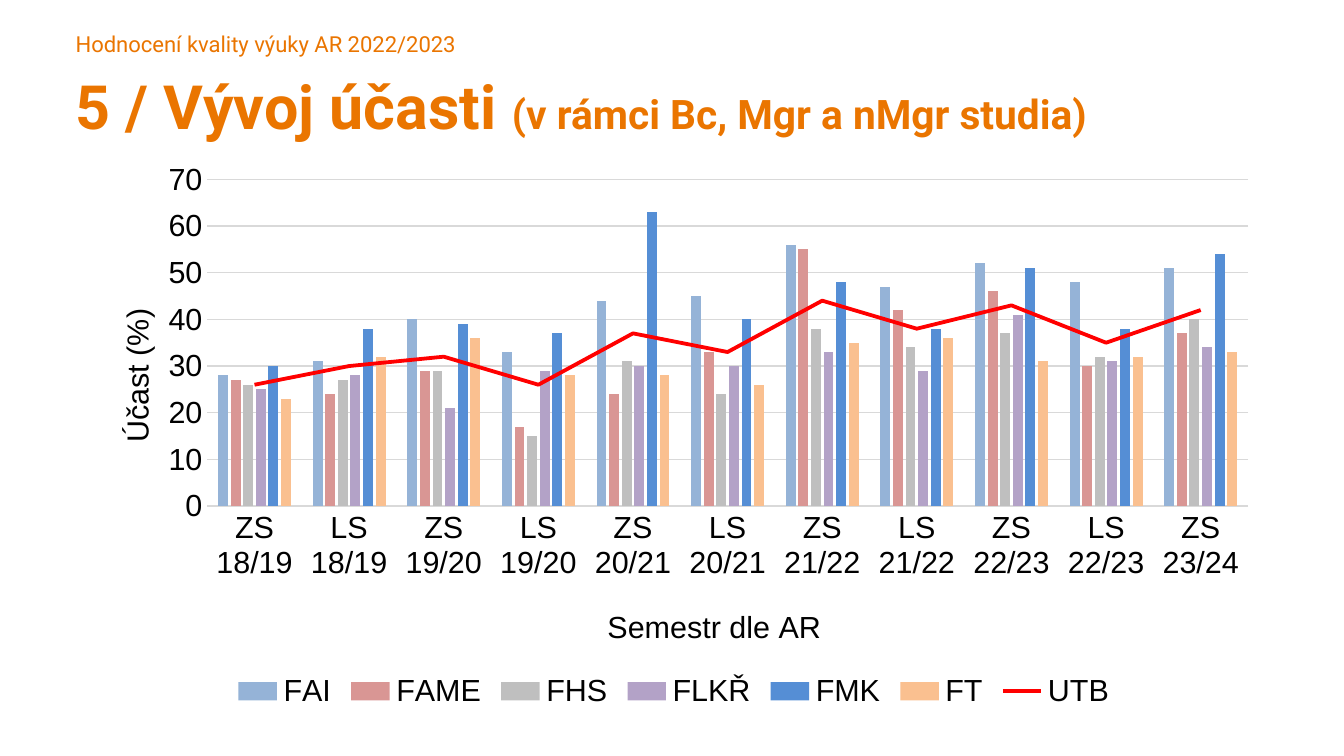
"""Builds the slide on participation by semester, with columns per faculty and a line for UTB."""
import copy

import pptx
import pptx.chart.data
import pptx.dml.color
import pptx.enum.chart
import pptx.enum.text
import pptx.oxml
import pptx.oxml.ns
import pptx.util
from lxml import etree

Pt = pptx.util.Pt
RGBColor = pptx.dml.color.RGBColor
qn = pptx.oxml.ns.qn

ORANGE = RGBColor(0xEA, 0x75, 0x00)
BLACK = RGBColor(0x00, 0x00, 0x00)
GRID_GREY = RGBColor(0xD9, 0xD9, 0xD9)
UTB_RED = RGBColor(0xFF, 0x00, 0x00)

SEMESTERS = ["ZS 18/19", "LS 18/19", "ZS 19/20", "LS 19/20", "ZS 20/21", "LS 20/21",
             "ZS 21/22", "LS 21/22", "ZS 22/23", "LS 22/23", "ZS 23/24"]
FACULTIES = [
    ("FAI", RGBColor(0x95, 0xB3, 0xD7), [28, 31, 40, 33, 44, 45, 56, 47, 52, 48, 51]),
    ("FAME", RGBColor(0xD9, 0x96, 0x94), [27, 24, 29, 17, 24, 33, 55, 42, 46, 30, 37]),
    ("FHS", RGBColor(0xBF, 0xBF, 0xBF), [26, 27, 29, 15, 31, 24, 38, 34, 37, 32, 40]),
    ("FLKŘ", RGBColor(0xB3, 0xA2, 0xC7), [25, 28, 21, 29, 30, 30, 33, 29, 41, 31, 34]),
    ("FMK", RGBColor(0x55, 0x8E, 0xD5), [30, 38, 39, 37, 63, 40, 48, 38, 51, 38, 54]),
    ("FT", RGBColor(0xFA, 0xC0, 0x90), [23, 32, 36, 28, 28, 26, 35, 36, 31, 32, 33]),
]
UTB = [26, 30, 32, 26, 37, 33, 44, 38, 43, 35, 42]


def write(frame, text, size, font="Roboto", color=ORANGE, bold=False):
    run = frame.paragraphs[0].add_run()
    run.text = text
    run.font.size = Pt(size)
    run.font.name = font
    run.font.bold = bold
    run.font.color.rgb = color


def set_layout(parent, index, **settings):
    for old in parent.findall(qn("c:layout")):
        parent.remove(old)
    layout = etree.Element(qn("c:layout"))
    manual = etree.SubElement(layout, qn("c:manualLayout"))
    for tag, value in settings.items():
        etree.SubElement(manual, qn("c:" + tag)).set("val", str(value))
    parent.insert(index, layout)


prs = pptx.Presentation()
prs.slide_width = Pt(793.44)
prs.slide_height = Pt(446.4)
slide = prs.slides.add_slide(prs.slide_layouts[5])

heading = slide.shapes.title
heading.left, heading.top, heading.width, heading.height = Pt(44.64), Pt(39.6), Pt(714.24), Pt(43.92)
overline = slide.shapes.add_textbox(Pt(44.64), Pt(18), Pt(714.24), Pt(15.84))
for box in (heading, overline):
    frame = box.text_frame
    frame.margin_left = frame.margin_top = frame.margin_right = frame.margin_bottom = 0
    frame.word_wrap = True
    frame.auto_size = pptx.enum.text.MSO_AUTO_SIZE.NONE
    frame.vertical_anchor = pptx.enum.text.MSO_ANCHOR.BOTTOM
    frame.paragraphs[0].alignment = pptx.enum.text.PP_ALIGN.LEFT
write(overline.text_frame, "Hodnocení kvality výuky AR 2022/2023", 13)
write(heading.text_frame, "5 / Vývoj účasti ", 36, bold=True)
write(heading.text_frame, "(v rámci Bc, Mgr a nMgr studia)", 24, bold=True)

participation = pptx.chart.data.CategoryChartData()
participation.categories = SEMESTERS
for name, color, values in FACULTIES:
    participation.add_series(name, values)
participation.add_series("UTB", UTB)
chart = slide.shapes.add_chart(
    pptx.enum.chart.XL_CHART_TYPE.COLUMN_CLUSTERED,
    Pt(44.64), Pt(89.28), Pt(706.32), Pt(332.64), participation).chart
chart.has_title = False
chart.font.size = Pt(18)
chart.font.name = "Arial"
chart.font.color.rgb = BLACK
chart.has_legend = True
chart.legend.position = pptx.enum.chart.XL_LEGEND_POSITION.BOTTOM
chart.legend.include_in_layout = False

columns = chart.plots[0]
columns.vary_by_categories = False
columns.gap_width = 219
columns.overlap = -27
for faculty, (name, color, values) in zip(columns.series, FACULTIES):
    faculty.format.fill.solid()
    faculty.format.fill.fore_color.rgb = color

for axis, caption, left, top in ((chart.category_axis, "Semestr dle AR", 0.44, 0.8),
                                 (chart.value_axis, "Účast (%)", 0.03, 0.27)):
    axis.major_tick_mark = axis.minor_tick_mark = pptx.enum.chart.XL_TICK_MARK.NONE
    write(axis.axis_title.text_frame, caption, 18, font="Arial", color=BLACK)
    set_layout(axis.axis_title._element, 1, xMode="edge", yMode="edge", x=left, y=top)

chart.value_axis.minimum_scale = 0
chart.value_axis.maximum_scale = 70
chart.value_axis.major_unit = 10
chart.value_axis.format.line.fill.background()
for rule in (chart.category_axis.format.line, chart.value_axis.major_gridlines.format.line):
    rule.color.rgb = GRID_GREY
    rule.width = Pt(0.75)

bar_chart = chart.category_axis._element.getparent().find(qn("c:barChart"))
utb_series = bar_chart.findall(qn("c:ser"))[-1]
for bar_setting in utb_series.findall(qn("c:invertIfNegative")):
    utb_series.remove(bar_setting)
line_chart = pptx.oxml.parse_xml(
    '<c:lineChart xmlns:c="http://schemas.openxmlformats.org/drawingml/2006/chart">'
    '<c:grouping val="standard"/><c:varyColors val="0"/></c:lineChart>')
line_chart.append(utb_series)
etree.SubElement(line_chart, qn("c:marker")).set("val", "1")
for axis_id in bar_chart.findall(qn("c:axId")):
    line_chart.append(copy.deepcopy(axis_id))
bar_chart.addnext(line_chart)
set_layout(bar_chart.getparent(), 0, layoutTarget="inner", xMode="edge", yMode="edge",
           x=0.11, y=0.05, w=0.87, h=0.58)

utb_line = chart.plots[1].series[0]
utb_line.smooth = False
utb_line.marker.style = pptx.enum.chart.XL_MARKER_STYLE.NONE
utb_line.format.line.color.rgb = UTB_RED
utb_line.format.line.width = Pt(2.25)

prs.save("out.pptx")
